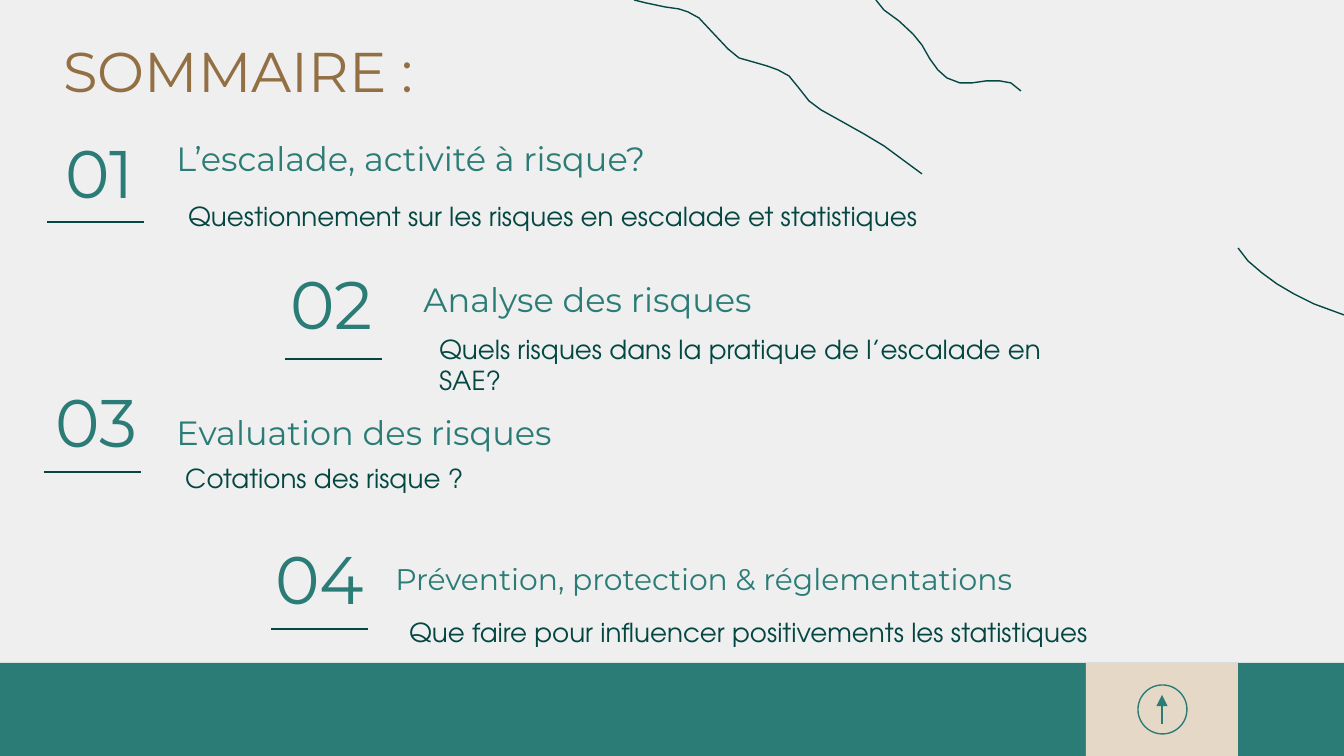
import pptx
import pptx.util
import pptx.dml.color
import pptx.enum.shapes
import pptx.enum.text
import pptx.oxml.ns
import lxml.etree

# Content: places are (left, top, width) in px
TITLE = "SOMMAIRE :"
ITEMS = [
    dict(num="01", num_at=(22, 118, 155), rule=(47, 222),
         head="L’escalade, activité à risque?", head_at=(163, 124, 805),
         sub="Questionnement sur les risques en escalade et statistiques",
         sub_at=(175, 187, 894)),
    dict(num="02", num_at=(254, 249, 155), rule=(285, 359),
         head="Analyse des risques", head_at=(410, 265, 526),
         sub="Quels risques dans la pratique de l’escalade en SAE?",
         sub_at=(426, 320, 679)),
    dict(num="03", num_at=(19, 367, 155), rule=(44, 472),
         head="Evaluation des risques", head_at=(163, 398, 620),
         sub="Cotations des risque ?", sub_at=(172, 449, 351)),
    dict(num="04", num_at=(242, 524, 155), rule=(271, 629),
         head="Prévention, protection & réglementations",
         head_at=(382, 547, 940), head_size=16,
         sub="Que faire pour influencer positivements les statistiques",
         sub_at=(396, 603, 855)),
]
CURVES = [
    [(634, 0), (646, 3), (665, 7), (679, 9), (688, 12), (699, 18), (712, 32),
     (728, 49), (739, 58), (753, 62), (767, 66), (778, 70), (789, 76),
     (798, 87), (809, 101), (821, 110), (839, 120), (864, 134), (884, 146),
     (903, 160), (922, 174)],
    [(876, 0), (884, 10), (899, 21), (913, 34), (922, 45), (930, 59),
     (938, 70), (947, 78), (960, 83), (972, 83), (986, 81), (1000, 81),
     (1011, 83), (1021, 91)],
    [(1238, 248), (1248, 261), (1262, 273), (1277, 284), (1294, 294),
     (1314, 304), (1344, 315)],
]
THEME = dict(back="EFEFEF", teal="2B7C76", sand="E5D8C7", dark="044742",
             gold="927044", sans="Montserrat", round="TeX Gyre Adventor",
             title=30, num=36, head=18, sub=14, line=0.75)
WIDE, HIGH = 1344, 756
FOOT = 663
RULE = 97
SCALE = 914400 / 134.4
KIND = pptx.enum.shapes.MSO_SHAPE
ALIGN = pptx.enum.text.PP_ALIGN


def px(n):
    return pptx.util.Emu(round(n * SCALE))


def color(name):
    return pptx.dml.color.RGBColor.from_string(THEME[name])


def stroke(line, name):
    line.color.rgb = color(name)
    line.width = pptx.util.Pt(THEME["line"])


def place(shape, at, high):
    shape.left, shape.top, shape.width = (px(n) for n in at)
    shape.height = px(high)


def write(shape, text, size, font, tint, align=ALIGN.LEFT, after=0):
    frame = shape.text_frame
    frame.word_wrap = True
    frame.auto_size = pptx.enum.text.MSO_AUTO_SIZE.NONE
    frame.vertical_anchor = pptx.enum.text.MSO_ANCHOR.TOP
    frame.margin_left = frame.margin_right = pptx.util.Inches(0.1)
    frame.margin_top = frame.margin_bottom = pptx.util.Inches(0.1)
    para = frame.paragraphs[0]
    para.alignment = align
    para.space_before = pptx.util.Pt(0)
    para.space_after = pptx.util.Pt(after)
    props = para._p.get_or_add_pPr()
    props.set("marL", "0")
    props.set("indent", "0")
    lxml.etree.SubElement(props, pptx.oxml.ns.qn("a:buNone"))
    run = para.add_run()
    run.text = text
    run.font.size = pptx.util.Pt(size)
    run.font.name = THEME[font]
    run.font.bold = False
    run.font.color.rgb = color(tint)


def label(slide, at, high, *style, **more):
    box = slide.shapes.add_textbox(0, 0, 0, 0)
    place(box, at, high)
    write(box, *style, **more)


def block(slide, kind, at, high, fill=None, edge=None):
    shape = slide.shapes.add_shape(kind, 0, 0, 0, 0)
    place(shape, at, high)
    shape.shadow.inherit = False
    if fill:
        shape.fill.solid()
        shape.fill.fore_color.rgb = color(fill)
    else:
        shape.fill.background()
    if edge:
        stroke(shape.line, edge)
    else:
        shape.line.fill.background()


def rule(slide, start, end, tint):
    link = slide.shapes.add_connector(
        pptx.enum.shapes.MSO_CONNECTOR.STRAIGHT,
        *(px(n) for n in start + end))
    stroke(link.line, tint)
    lxml.etree.SubElement(link._element.spPr, pptx.oxml.ns.qn("a:effectLst"))
    return link


def curve(slide, points):
    path = slide.shapes.build_freeform(*points[0], scale=SCALE)
    path.add_line_segments(points[1:], close=False)
    shape = path.convert_to_shape()
    shape.shadow.inherit = False
    shape.fill.background()
    stroke(shape.line, "dark")


def main():
    deck = pptx.Presentation()
    deck.slide_width, deck.slide_height = px(WIDE), px(HIGH)
    slide = deck.slides.add_slide(deck.slide_layouts[4])
    slide.background.fill.solid()
    slide.background.fill.fore_color.rgb = color("back")

    # Footer band with the arrow badge
    band = HIGH - FOOT
    block(slide, KIND.RECTANGLE, (0, FOOT, WIDE), band, "teal")
    block(slide, KIND.RECTANGLE, (1086, FOOT, 152), band, "sand")
    block(slide, KIND.OVAL, (1138, 685, 49), 49, edge="teal")
    arrow = rule(slide, (1162, 695), (1162, 724), "teal")
    lxml.etree.SubElement(arrow.line._get_or_add_ln(),
                          pptx.oxml.ns.qn("a:headEnd"), type="triangle")

    # Contour lines
    for points in CURVES:
        curve(slide, points)

    # Title, then one numbered group per chapter
    place(slide.shapes.title, (50, 23, 715), 148)
    write(slide.shapes.title, TITLE, THEME["title"], "sans", "gold")
    bodies = [p for p in slide.placeholders if p.placeholder_format.idx > 0]
    for item, body in zip(ITEMS, bodies):
        place(body, item["head_at"], 54)
        write(body, item["head"], item.get("head_size", THEME["head"]),
              "sans", "teal", after=16)
        label(slide, item["num_at"], 90, item["num"], THEME["num"],
              "sans", "teal", align=ALIGN.CENTER)
        label(slide, item["sub_at"], 78, item["sub"], THEME["sub"],
              "round", "dark")
        left, top = item["rule"]
        rule(slide, (left, top), (left + RULE, top), "dark")

    deck.save("out.pptx")


if __name__ == "__main__":
    main()
